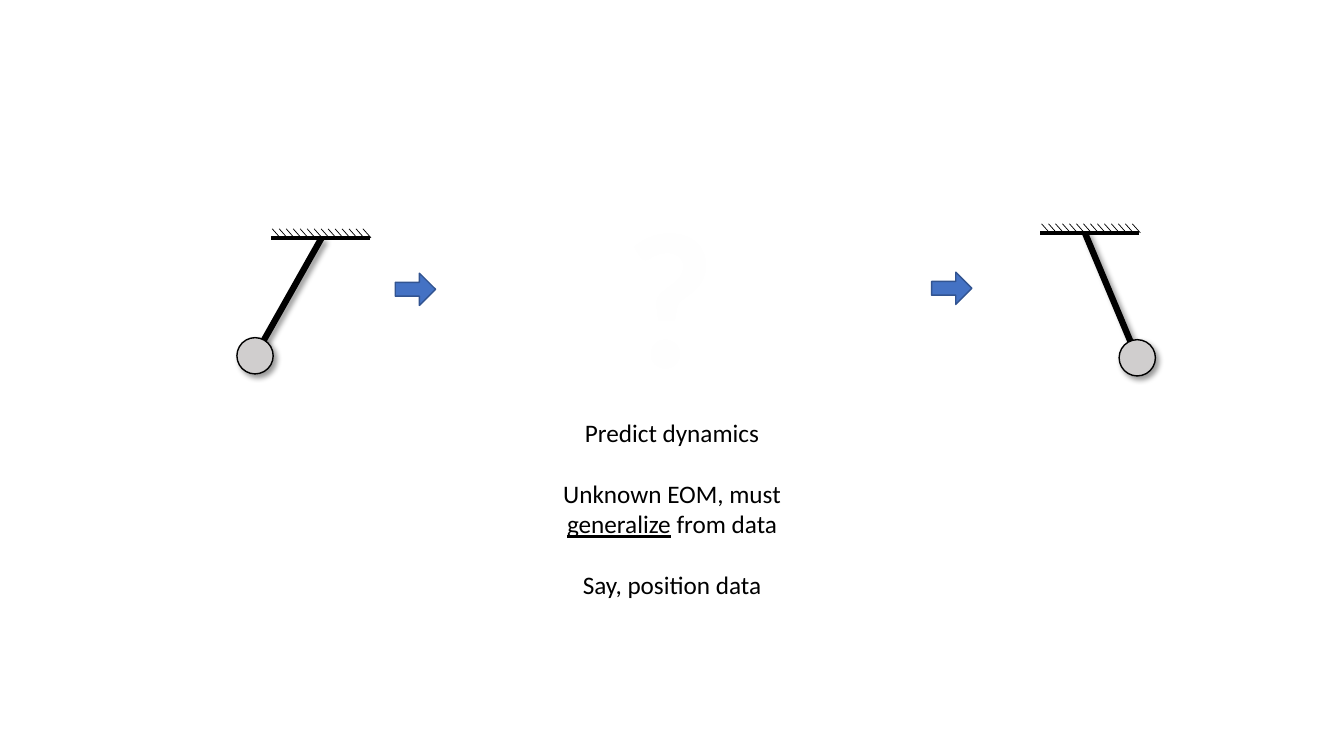
from math import hypot
from lxml.etree import SubElement as Sub
from pptx import Presentation
from pptx.dml.color import RGBColor as Rgb
from pptx.enum.shapes import MSO_CONNECTOR as Link, MSO_SHAPE as Kind
from pptx.enum.text import MSO_ANCHOR as Anchor, PP_ALIGN as Align
from pptx.oxml.ns import qn
from pptx.util import Inches, Pt

HUE = {"ink": "000000", "bob": "D0CECE", "blue": "4472C4",
       "edge": "325491", "pale": "FEFEFE"}


def color(name):
    return Rgb.from_string(HUE[name])


def shade(item, on):
    """Give an item a soft drop shadow, or none at all."""
    props = item._element.spPr
    for old in props.findall(qn("a:effectLst")):
        props.remove(old)
    fx = Sub(props, qn("a:effectLst"))
    if on:
        drop = Sub(fx, qn("a:outerShdw"), blurRad=str(Pt(4)),
                   dist=str(Pt(3)), dir="2700000", algn="tl", rotWithShape="0")
        tint = Sub(drop, qn("a:srgbClr"), val=HUE["ink"])
        Sub(tint, qn("a:alpha"), val="40000")


def line(shapes, x1, y1, x2, y2, width, soft=False):
    ends = [Inches(v) for v in (x1, y1, x2, y2)]
    link = shapes.add_connector(Link.STRAIGHT, *ends)
    link.line.color.rgb = color("ink")
    link.line.width = Pt(width)
    shade(link, soft)


def form(shapes, kind, box, fill, edge, soft=False):
    item = shapes.add_shape(kind, *[Inches(v) for v in box])
    item.fill.solid()
    item.fill.fore_color.rgb = color(fill)
    item.line.color.rgb = color(edge)
    item.line.width = Pt(1)
    shade(item, soft)
    return item


def arrow(slide, box):
    item = form(slide.shapes, Kind.RIGHT_ARROW, box, "blue", "edge")
    item.adjustments[0] = 0.427


def swing(slide, left, top, pin, dx, dy):
    """Pendulum: pin is the pivot's offset, dx and dy the bob's centre."""
    parts = slide.shapes.add_group_shape().shapes
    # Hatched ceiling
    line(parts, left, top, left + 0.98, top, 3)
    for i in range(14):
        x = left + 0.01 + i * 0.9 / 13
        line(parts, x, top - 0.09, x + 0.08, top, 0.5)
    # Rod, ending just inside the bob
    size = 0.36
    keep = 1 - 0.12 / hypot(dx - pin, dy)
    line(parts, left + pin, top, left + pin + (dx - pin) * keep,
         top + dy * keep, 4.5, True)
    # Bob
    form(parts, Kind.OVAL, (left + dx - size / 2, top + dy - size / 2,
                            size, size), "bob", "ink", True)


def text(slide, box, paras, wrap, size, hue, gap=0, **style):
    frame = slide.shapes.add_textbox(*[Inches(v) for v in box]).text_frame
    frame.word_wrap = wrap
    frame.vertical_anchor = Anchor.TOP
    look = {"name": "Calibri", "size": Pt(size), **style}
    runs = []
    for i, bits in enumerate(paras):
        para = frame.paragraphs[0] if i == 0 else frame.add_paragraph()
        para.alignment = Align.CENTER
        para.space_before = Pt(gap if i else 0)
        for words, under in bits:
            run = para.add_run()
            run.text = words
            for key, value in {**look, "underline": under}.items():
                setattr(run.font, key, value)
            run.font.color.rgb = color(hue)
            runs.append(run)
    return runs


def query(slide, box):
    run = text(slide, box, [[("?", None)]], False, 138, "pale", bold=True)[0]
    props = run._r.get_or_add_rPr()
    props.set("spc", "50")
    rim = Sub(props, qn("a:ln"), w=str(Pt(0.75)))
    Sub(Sub(rim, qn("a:solidFill")), qn("a:srgbClr"), val=HUE["blue"])
    props.insert(0, rim)


def notes(slide, box):
    paras = [
        [("Predict dynamics", None)],
        [("Unknown EOM, must ", None), ("generalize", True),
         (" from data", None)],
        [("Say, position data", None)],
    ]
    text(slide, box, paras, True, 18, "ink", gap=22)


def main():
    deck = Presentation()
    deck.slide_width, deck.slide_height = Inches(13.33), Inches(7.5)
    slide = deck.slides.add_slide(deck.slide_layouts[6])
    arrow(slide, (3.92, 2.71, 0.4, 0.32))
    arrow(slide, (9.24, 2.7, 0.4, 0.32))
    swing(slide, 2.69, 2.36, 0.5, -0.16, 1.17)
    swing(slide, 10.32, 2.31, 0.44, 0.96, 1.24)
    query(slide, (6.09, 1.68, 1.11, 2.42))
    notes(slide, (5.09, 4.09, 3.15, 1.92))
    deck.save("out.pptx")


if __name__ == "__main__":
    main()
